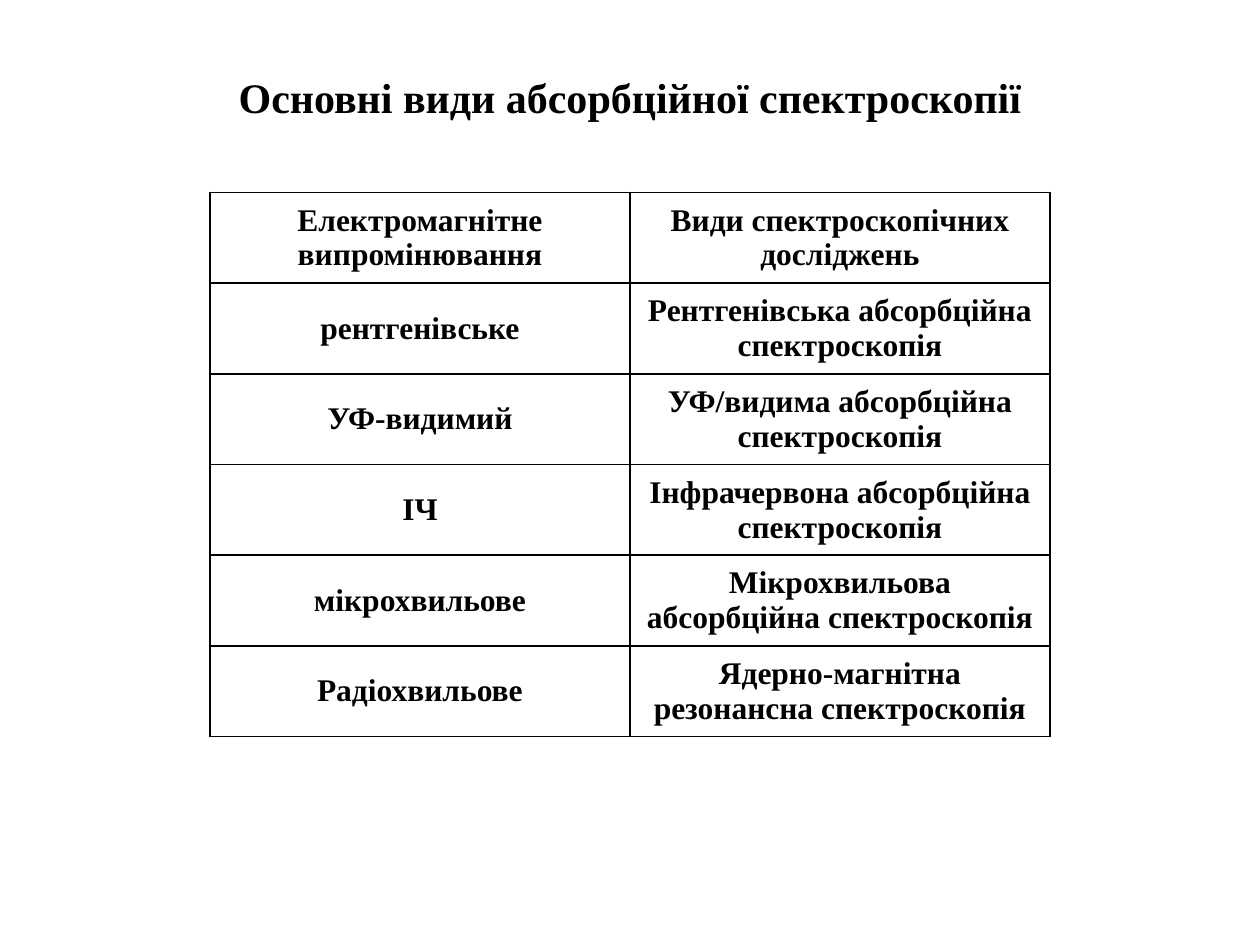
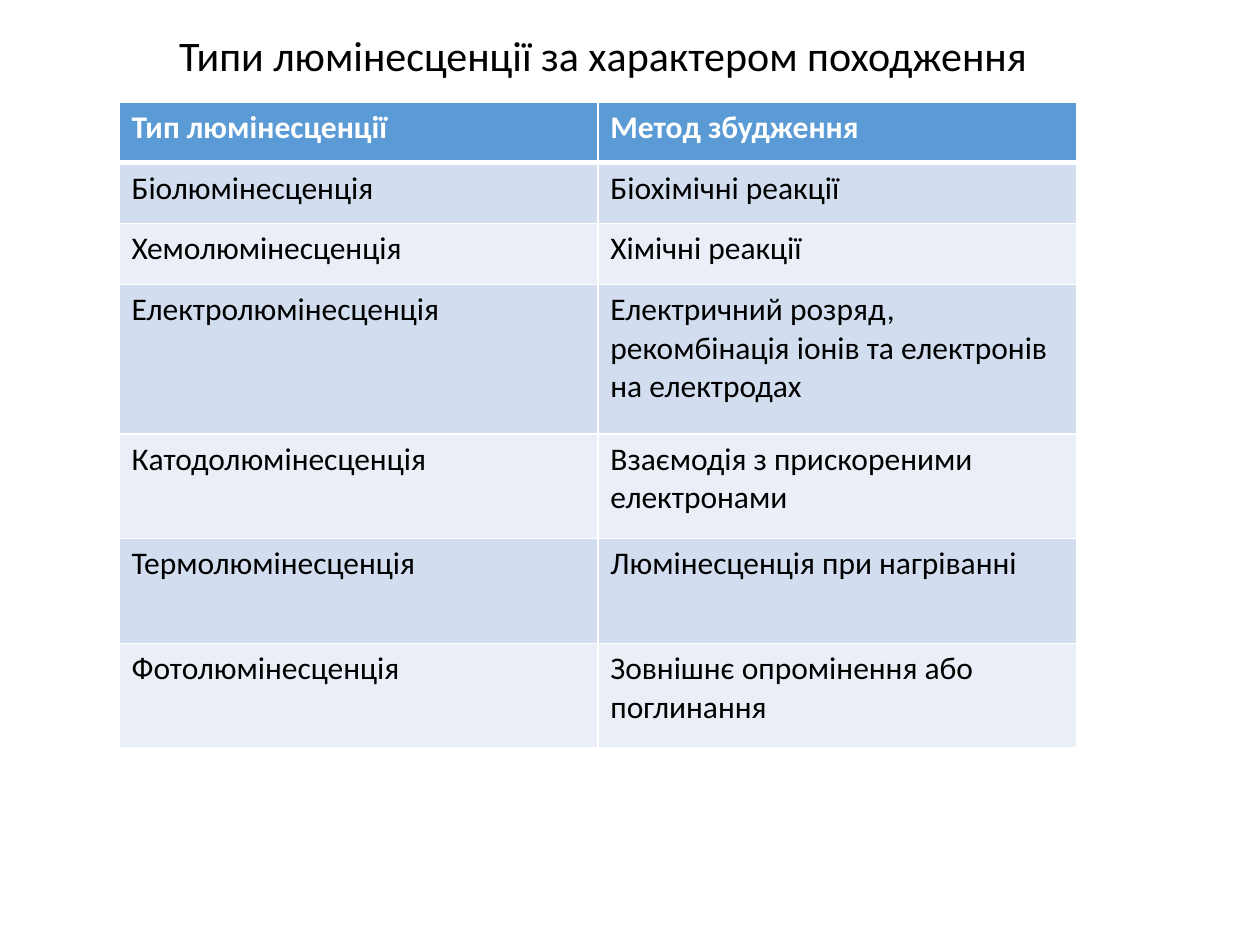
import dataclasses

import pptx
import pptx.dml.color
import pptx.enum.text
import pptx.oxml
import pptx.oxml.ns
import pptx.util

Pt = pptx.util.Pt
Align = pptx.enum.text.PP_ALIGN
Anchor = pptx.enum.text.MSO_ANCHOR


@dataclasses.dataclass(frozen=True)
class Theme:
    ink: str = "000000"
    paper: str = "FFFFFF"
    head: str = "5B9BD5"
    bands: tuple = ("D2DEEF", "EAEFF7")
    serif: str = "Times New Roman"
    sans: str = "Calibri"
    title: int = 24
    body: int = 18
    rule: int = 1
    thick: int = 3


THEME = Theme()

METHODS = [
    ("Електромагнітне\nвипромінювання", "Види спектроскопічних досліджень"),
    ("рентгенівське", "Рентгенівська абсорбційна спектроскопія"),
    ("УФ-видимий", "УФ/видима абсорбційна спектроскопія"),
    ("ІЧ", "Інфрачервона абсорбційна спектроскопія"),
    ("мікрохвильове", "Мікрохвильова абсорбційна спектроскопія"),
    ("Радіохвильове", "Ядерно-магнітна резонансна спектроскопія"),
]

KINDS = [
    ("Тип люмінесценції", "Метод збудження"),
    ("Біолюмінесценція", "Біохімічні реакції"),
    ("Хемолюмінесценція", "Хімічні реакції"),
    ("Електролюмінесценція",
     "Електричний розряд, рекомбінація іонів та електронів на електродах"),
    ("Катодолюмінесценція", "Взаємодія з прискореними електронами"),
    ("Термолюмінесценція", "Люмінесценція при нагріванні"),
    ("Фотолюмінесценція", "Зовнішнє опромінення або поглинання"),
]


def color(code):
    return pptx.dml.color.RGBColor.from_string(code)


def style(frame, font, size, ink, bold, align):
    for para in frame.paragraphs:
        para.alignment = align
        for run in para.runs:
            run.font.name = font
            run.font.size = Pt(size)
            run.font.bold = bold
            run.font.color.rgb = color(ink)


def add_slide(deck, text, box, font, bold):
    """Add a title-only slide with its title placed at box."""
    slide = deck.slides.add_slide(deck.slide_layouts[5])
    title = slide.shapes.title
    title.left, title.top, title.width, title.height = map(Pt, box)
    frame = title.text_frame
    frame.text = text
    frame.auto_size = pptx.enum.text.MSO_AUTO_SIZE.NONE
    frame.vertical_anchor = Anchor.TOP
    style(frame, font, THEME.title, THEME.ink, bold, Align.CENTER)
    return slide


def add_grid(slide, rows, left, top, width, heights):
    """Add a plain table with equal columns and fill in its text."""
    count = len(rows[0])
    frame = slide.shapes.add_table(len(rows), count, Pt(left), Pt(top),
                                   Pt(width * count), Pt(sum(heights)))
    grid = frame.table
    grid.first_row = grid.horz_banding = False
    for col in grid.columns:
        col.width = Pt(width)
    for row, height, texts in zip(grid.rows, heights, rows):
        row.height = Pt(height)
        for cell, text in zip(row.cells, texts):
            cell.text_frame.text = text
    return grid


def set_edges(cell, ink, top=THEME.rule, bottom=THEME.rule):
    """Draw the four borders; call before the cell is filled."""
    props = cell._tc.get_or_add_tcPr()
    widths = {"L": THEME.rule, "R": THEME.rule, "T": top, "B": bottom}
    for side, width in widths.items():
        props.append(pptx.oxml.parse_xml(
            f'<a:ln{side} {pptx.oxml.ns.nsdecls("a")} w="{Pt(width)}">'
            f'<a:solidFill><a:srgbClr val="{ink}"/></a:solidFill>'
            f'</a:ln{side}>'))


def add_ruled(slide):
    grid = add_grid(slide, METHODS, 120, 110, 240, [51.84] * len(METHODS))
    for cell in grid.iter_cells():
        set_edges(cell, THEME.ink)
        cell.fill.background()
        cell.vertical_anchor = Anchor.MIDDLE
        cell.margin_left = cell.margin_right = Pt(5.76)
        cell.margin_top = cell.margin_bottom = Pt(5.76)
        style(cell.text_frame, THEME.serif, THEME.body, THEME.ink, True,
              Align.CENTER)


def add_banded(slide):
    heights = [34.8] * 3 + [85.5] + [59.8] * 3
    grid = add_grid(slide, KINDS, 68, 58.2, 273.6, heights)
    for index, row in enumerate(grid.rows):
        head = index == 0
        fill = THEME.head if head else THEME.bands[(index - 1) % 2]
        ink = THEME.paper if head else THEME.ink
        for cell in row.cells:
            set_edges(cell, THEME.paper,
                      top=THEME.thick if index == 1 else THEME.rule,
                      bottom=THEME.thick if head else THEME.rule)
            cell.fill.solid()
            cell.fill.fore_color.rgb = color(fill)
            style(cell.text_frame, THEME.sans, THEME.body, ink, head,
                  Align.LEFT)


def main():
    deck = pptx.Presentation()
    deck.slide_width, deck.slide_height = Pt(720), Pt(540)
    add_ruled(add_slide(deck, "Основні види абсорбційної спектроскопії",
                        (81, 37.5, 558, 36), THEME.serif, True))
    add_banded(add_slide(deck, "Типи люмінесценції за характером походження",
                         (54.7, 13, 580, 36), THEME.sans, False))
    deck.save("out.pptx")


if __name__ == "__main__":
    main()
